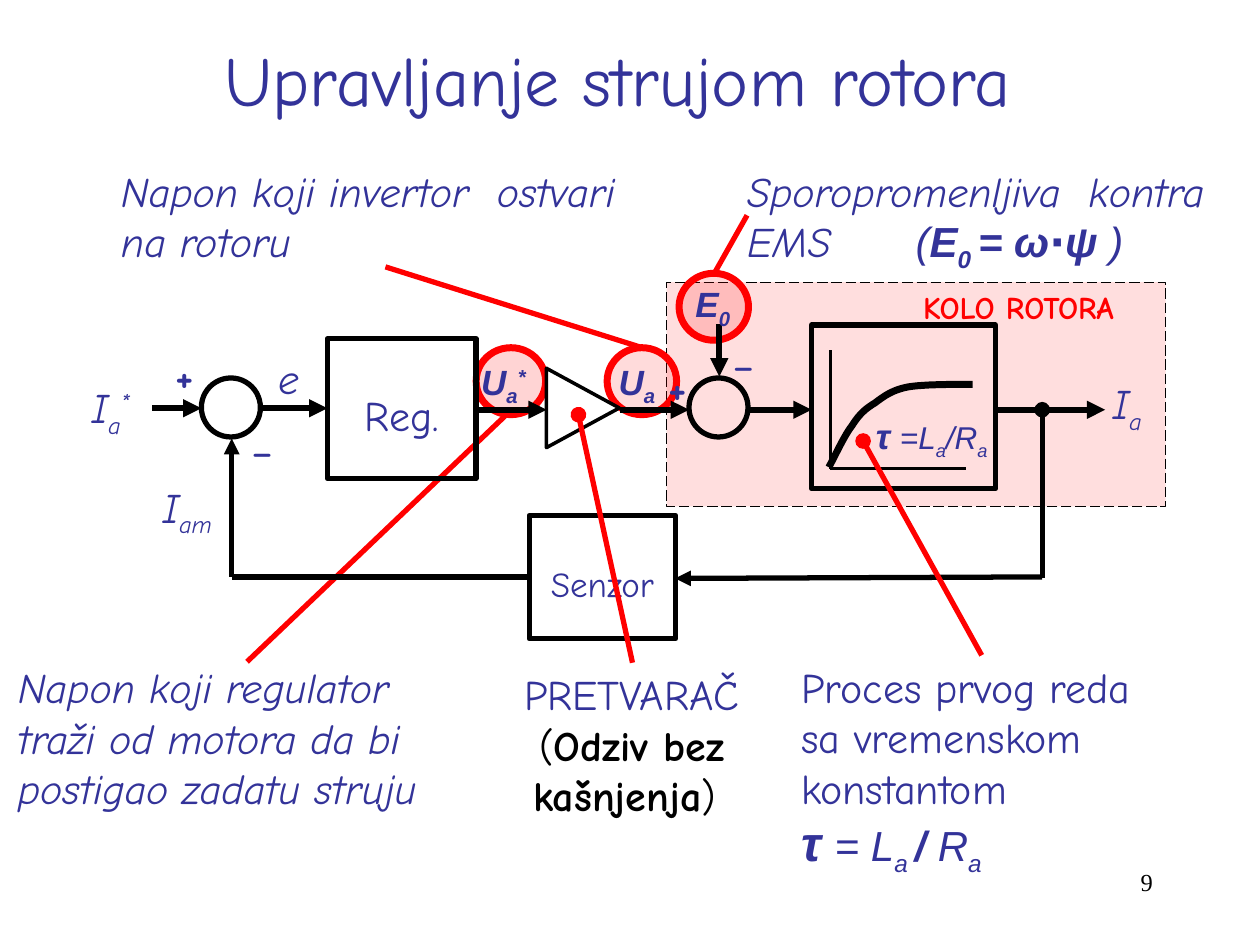
from dataclasses import dataclass
from typing import Optional

from lxml import etree
from pptx import Presentation
from pptx import util as u
from pptx.dml.color import RGBColor
from pptx.enum import dml, shapes, text
from pptx.oxml import ns

COLOURS = {"ink": "333399", "black": "000000", "red": "FF0000", "white": "FFFFFF"}
COMIC, ARIAL, TIMES = "Comic Neue", "Arial", "Times New Roman"
LEFT, CENTRE, RIGHT = text.PP_ALIGN.LEFT, text.PP_ALIGN.CENTER, text.PP_ALIGN.RIGHT
RECT = shapes.MSO_SHAPE.RECTANGLE
OVAL = shapes.MSO_SHAPE.OVAL
TRIANGLE = shapes.MSO_SHAPE.ISOSCELES_TRIANGLE
SUB, SUPER = -25000, 30000


@dataclass
class Span:
    words: str
    base: int = 0
    bold: Optional[bool] = None
    font: Optional[str] = None
    size: Optional[float] = None


@dataclass
class Para:
    spans: list[Span]
    size: float = 24
    font: str = COMIC
    colour: str = "ink"
    bold: bool = False
    italic: bool = False
    align: text.PP_ALIGN = LEFT
    tab: float = 0


@dataclass
class Label:
    at: tuple[float, float, float, float]
    paras: list[Para]
    inset: bool = False
    wrap: bool = True
    middle: bool = False


@dataclass
class Block:
    at: tuple[float, float, float, float]
    kind: shapes.MSO_SHAPE = RECT
    line: str = "black"
    width: float = 3
    fill: Optional[str] = None
    alpha: int = 100
    turn: int = 0
    dashed: bool = False
    para: Optional[Para] = None


@dataclass
class Wire:
    start: tuple[float, float]
    end: tuple[float, float]
    width: float = 3
    colour: str = "black"
    head: str = ""
    tail: str = ""


def rgb(name: str) -> RGBColor:
    return RGBColor.from_string(COLOURS[name])


def write(frame, paras: list[Para]) -> None:
    for index, item in enumerate(paras):
        para = frame.paragraphs[0] if index == 0 else frame.add_paragraph()
        para.alignment = item.align
        if item.tab:
            tabs = etree.SubElement(para._p.get_or_add_pPr(), ns.qn("a:tabLst"))
            etree.SubElement(tabs, ns.qn("a:tab"), pos=str(u.Cm(item.tab)), algn="l")
        para.font.size, para.font.name = u.Pt(item.size), item.font
        para.font.bold, para.font.italic = item.bold, item.italic
        para.font.color.rgb = rgb(item.colour)
        for span in item.spans:
            run = para.add_run()
            run.text = span.words
            if span.base:
                run._r.get_or_add_rPr().set("baseline", str(span.base))
            if span.bold is not None:
                run.font.bold = span.bold
            if span.font:
                run.font.name = span.font
            if span.size:
                run.font.size = u.Pt(span.size)


def draw_label(page, label: Label) -> None:
    frame = page.shapes.add_textbox(*map(u.Cm, label.at)).text_frame
    frame.word_wrap = label.wrap
    if label.middle:
        frame.vertical_anchor = text.MSO_ANCHOR.MIDDLE
    if not label.inset:
        frame.margin_left = frame.margin_right = 0
        frame.margin_top = frame.margin_bottom = 0
    write(frame, label.paras)


def draw_block(page, block: Block) -> None:
    shape = page.shapes.add_shape(block.kind, *map(u.Cm, block.at))
    shape.shadow.inherit = False
    shape.rotation = block.turn
    shape.line.color.rgb = rgb(block.line)
    shape.line.width = u.Pt(block.width)
    if block.dashed:
        shape.line.dash_style = dml.MSO_LINE.LONG_DASH
    if block.fill:
        shape.fill.solid()
        shape.fill.fore_color.rgb = rgb(block.fill)
        if block.alpha < 100:
            colour = shape._element.spPr.find(".//" + ns.qn("a:srgbClr"))
            etree.SubElement(colour, ns.qn("a:alpha"), val=str(block.alpha * 1000))
    else:
        shape.fill.background()
    if block.para:
        frame = shape.text_frame
        frame.margin_top, frame.margin_bottom = u.Cm(0.38), u.Cm(0.13)
        frame.vertical_anchor = text.MSO_ANCHOR.MIDDLE
        write(frame, [block.para])


def draw_wire(page, wire: Wire) -> None:
    line = page.shapes.add_connector(
        shapes.MSO_CONNECTOR.STRAIGHT, *map(u.Cm, wire.start + wire.end))
    line.line.color.rgb = rgb(wire.colour)
    line.line.width = u.Pt(wire.width)
    outline = line.line._get_or_add_ln()
    for tag, kind in (("a:headEnd", wire.head), ("a:tailEnd", wire.tail)):
        if kind:
            etree.SubElement(outline, ns.qn(tag), type=kind)
    etree.SubElement(line._element.spPr, ns.qn("a:effectLst"))


def draw_curve(page, start: tuple, pieces: list[tuple], steps: int = 12) -> None:
    builder = page.shapes.build_freeform(*map(u.Cm, start))
    points = []
    for first, second, end in pieces:
        for step in range(1, steps + 1):
            t = step / steps
            weights = ((1 - t) ** 3, 3 * t * (1 - t) ** 2, 3 * t * t * (1 - t), t ** 3)
            corners = (start, first, second, end)
            points.append(tuple(u.Cm(sum(w * c[axis] for w, c in zip(weights, corners)))
                                for axis in (0, 1)))
        start = end
    builder.add_line_segments(points, close=False)
    curve = builder.convert_to_shape()
    curve.shadow.inherit = False
    curve.fill.background()
    curve.line.color.rgb = rgb("black")
    curve.line.width = u.Pt(4)


def note(left: float, top: float, width: float, height: float, *spans: Span,
         tab: float = 0) -> Label:
    return Label((left, top, width, height), [Para(list(spans), italic=True, tab=tab)])


def voltage(left: float, top: float, *spans: Span) -> Label:
    return Label((left, top, 1.3, 0.86),
                 [Para(list(spans), size=20, font=ARIAL, bold=True, italic=True)])


def sign(left: float, top: float, mark: str, size: float) -> Label:
    return Label((left, top, 0.79, 1.3), [Para([Span(mark)], size=size, bold=True)], inset=True)


def ring(left: float, top: float, alpha: int) -> Block:
    return Block((left, top, 1.4, 1.35), OVAL, "red", 4, "red", alpha)


def adder(left: float) -> Block:
    return Block((left, 7.62, 1.19, 1.19), OVAL)


def arrow(left: float, right: float, top: float = 8.26) -> Wire:
    return Wire((left, top), (right, top), 3.5, tail="triangle")


def pointer(start: tuple, end: tuple, head: str = "") -> Wire:
    return Wire(start, end, colour="red", head=head)


def caption(words: str, size: float) -> Para:
    return Para([Span(words)], size=size, align=CENTRE)


SUB_A = Span("a", SUB)
STAR = Span("*", SUPER)

ITEMS = [
    Block((13.44, 5.69, 10.06, 4.52), width=0, fill="red", alpha=13, dashed=True),
    Label((18.36, 5.69, 5.31, 1.02),
          [Para([Span("KOLO ROTORA")], size=18, colour="red", bold=True)], inset=True, wrap=False),
    note(15.06, 3.33, 10.01, 2.06, Span("Sporopromenljiva  kontra EMS\t"), Span("(", font=ARIAL),
         Span("E", bold=True, font=ARIAL), Span("0 ", SUB, True, ARIAL),
         Span("= ω⋅ψ ", bold=True, font=ARIAL), Span(")", font=ARIAL), tab=3.4),
    ring(13.69, 5.51, 15),
    pointer((14.4, 5.51), (15.06, 4.34)),
    pointer((12.95, 7.01), (7.77, 5.38)),
    note(2.44, 3.33, 10.64, 2.06, Span("Napon koji invertor  ostvari na rotoru")),
    ring(12.24, 7.01, 14),
    pointer((10.26, 8.31), (4.98, 13.34)),
    ring(9.6, 7.01, 17),
    note(0.36, 13.34, 9.27, 3.07,
         Span("Napon koji regulator traži od motora da bi postigao zadatu struju")),
    Label((18.21, 17.35, 5.28, 1.27),
          [Para([Span("9")], size=14, font=TIMES, colour="black", align=RIGHT)], inset=True),
    Block((6.6, 6.83, 3, 2.82), para=caption("Reg.", 24)),
    arrow(5.28, 6.6, 8.23),
    arrow(9.6, 11.02),
    arrow(20.07, 22.28),
    Block((10.67, 10.39, 2.95, 2.49), para=caption("Senzor", 20)),
    adder(4.06),
    arrow(3.07, 4.06, 8.23),
    Wire((4.67, 11.63), (4.67, 8.84), tail="triangle"),
    Wire((4.67, 11.63), (10.67, 11.63)),
    Wire((21.01, 8.26), (21.01, 11.66), head="oval"),
    Wire((21.01, 11.63), (13.61, 11.66), tail="triangle"),
    sign(4.88, 8.43, "_", 18),
    sign(3.28, 6.93, "+", 24),
    note(1.85, 7.7, 1.19, 1.02, Span("I"), SUB_A, STAR),
    note(3.28, 9.7, 1.6, 1.02, Span("I"), Span("am", SUB)),
    voltage(9.7, 7.26, Span("U"), SUB_A, STAR),
    Block((10.95, 7.49, 1.6, 1.47), TRIANGLE, width=2, fill="white", turn=90),
    Label((17.32, 8.36, 2.59, 0.86),
          [Para([Span("τ ", bold=True, size=20), Span("=L"), SUB_A, Span("/R"), SUB_A],
                size=18, font=ARIAL, italic=True, align=RIGHT)]),
    Block((16.36, 6.55, 3.71, 3.3)),
    Wire((16.74, 7.06), (16.74, 9.45), 2),
    Wire((16.74, 9.45), (19.48, 9.45), 2),
    arrow(15.09, 16.36),
    adder(13.89),
    arrow(12.5, 13.89),
    Wire((14.5, 6.54), (14.5, 7.59), 3.5, tail="triangle"),
    voltage(14.02, 5.69, Span("E"), Span("0", SUB)),
    voltage(12.47, 7.26, Span("U"), SUB_A),
    note(22.43, 7.62, 1.27, 1.02, Span("I"), SUB_A),
    sign(14.58, 6.68, "_", 18),
    sign(13.23, 7.16, "+", 24),
    note(5.61, 7.11, 0.97, 1.02, Span("e")),
    Label((0.38, 0, 24.61, 3.18), [caption("Upravljanje strujom rotora ", 40)],
          inset=True, middle=True),
    pointer((11.66, 8.36), (12.75, 13.36), "oval"),
    Label((9.75, 13.36, 5.97, 3.33),
          [caption("PRETVARAČ", 24),
           Para([Span("("), Span("Odziv bez kašnjenja", bold=True), Span(") ")],
                colour="black", align=CENTRE)], inset=True),
    Label((15.9, 13.21, 7.8, 5.56),
          [Para([Span("Proces prvog reda sa vremenskom konstantom")]),
           Para([Span("τ ", bold=True, size=28), Span("= L"), Span("a ", SUB),
                 Span("/ ", bold=True), Span("R"), SUB_A], font=ARIAL, italic=True)], inset=True),
    pointer((17.4, 8.89), (19.79, 13.21), "oval"),
]
CURVE_START = (16.71, 9.42)
CURVE = [((16.87, 9.12), (17.02, 8.79), (17.17, 8.59)),
         ((17.32, 8.36), (17.42, 8.26), (17.63, 8.13)),
         ((17.81, 8), (17.96, 7.87), (18.31, 7.8)),
         ((18.64, 7.75), (19.13, 7.75), (19.61, 7.75))]
PAINTERS = {Block: draw_block, Label: draw_label, Wire: draw_wire}


def main() -> None:
    deck = Presentation()
    deck.slide_width, deck.slide_height = u.Cm(25.4), u.Cm(19.05)
    page = deck.slides.add_slide(deck.slide_layouts[6])
    for item in ITEMS:
        PAINTERS[type(item)](page, item)
    draw_curve(page, CURVE_START, CURVE)
    deck.save("out.pptx")


if __name__ == "__main__":
    main()
